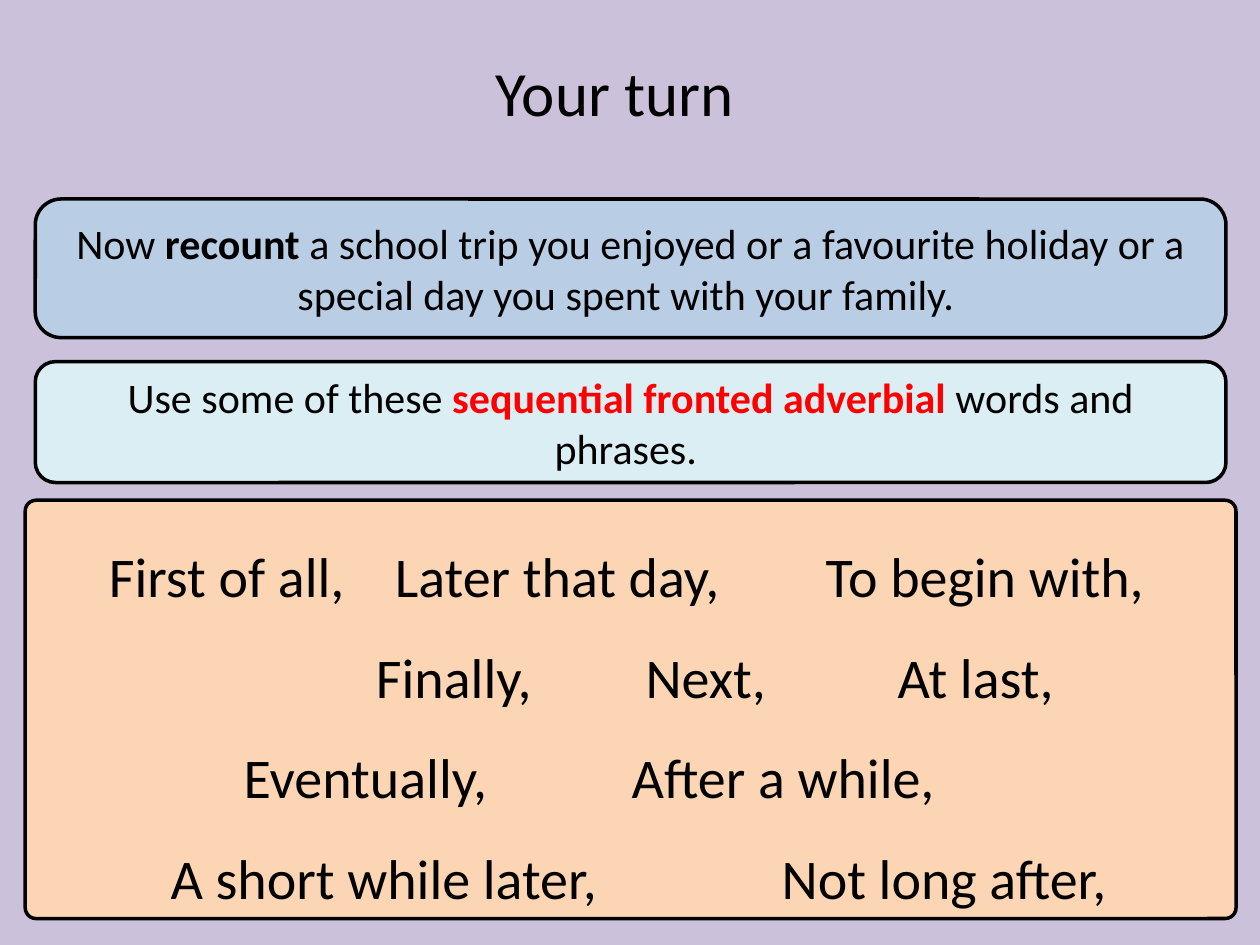
"""Build the "Your turn" writing task slide."""
import pptx
import pptx.dml.color
import pptx.enum.shapes
import pptx.enum.text
import pptx.oxml
import pptx.oxml.ns
import pptx.util

Inches = pptx.util.Inches
RGBColor = pptx.dml.color.RGBColor
BLACK = RGBColor(0x00, 0x00, 0x00)
RED = RGBColor(0xFF, 0x00, 0x00)
LILAC = RGBColor(0xCC, 0xC1, 0xDA)
BLUE = RGBColor(0xB9, 0xCD, 0xE5)
AQUA = RGBColor(0xDB, 0xEE, 0xF4)
PEACH = RGBColor(0xFC, 0xD5, 0xB5)

TITLE = "Your turn"
TITLE_BOX = (3.83, 0.37, 2.1, 0.71)
PLAIN = {"size": 24, "bold": False, "color": BLACK}
STRONG = {**PLAIN, "bold": True}
KEYWORD = {**STRONG, "color": RED}
LARGE = {**PLAIN, "size": 32}
HEADING = {**PLAIN, "size": 36}

INSTRUCTIONS = [
    ((0.28, 1.58, 9.45, 1.1), 0.186, BLUE, [
        ("Now ", PLAIN), ("recount", STRONG),
        (" a school trip you enjoyed or a favourite holiday or a special day"
         " you spent with your family. ", PLAIN)]),
    ((0.28, 2.87, 9.45, 0.96), 0.167, AQUA, [
        ("Use some of these ", PLAIN), ("sequential fronted adverbial", KEYWORD),
        (" words and phrases. ", PLAIN)]),
]
PHRASE_BOX = (0.2, 3.97, 9.61, 3.32)
PHRASE_TEXT_LEFT = 0.33
PHRASE_ROWS = [
    [(0.87, "First of all,"), (3.14, "Later that day,"), (6.56, "To begin with,")],
    [(2.99, "Finally,"), (5.13, "Next,"), (7.13, "At last,")],
    [(1.94, "Eventually,"), (5.02, "After a while,")],
    [(1.36, "A short while later,"), (6.21, "Not long after,")],
]


def add_run(paragraph, text, style):
    run = paragraph.add_run()
    run.text = text
    formats = {"name": "Calibri", "size": pptx.util.Pt(style["size"]), "bold": style["bold"]}
    for name, value in formats.items():
        setattr(run.font, name, value)
    run.font.color.rgb = style["color"]


def add_panel(slide, box, corner, fill):
    shape = slide.shapes.add_shape(
        pptx.enum.shapes.MSO_SHAPE.ROUNDED_RECTANGLE, *map(Inches, box))
    shape.adjustments[0] = corner
    shape.shadow.inherit = False
    shape.fill.solid()
    shape.fill.fore_color.rgb = fill
    shape.line.color.rgb = BLACK
    shape.line.width = pptx.util.Pt(2)
    shape.text_frame.word_wrap = True
    shape.text_frame.vertical_anchor = pptx.enum.text.MSO_ANCHOR.MIDDLE
    return shape.text_frame


def add_tab_stops(paragraph, positions):
    properties = paragraph._p.get_or_add_pPr()
    tab_list = pptx.oxml.parse_xml(f"<a:tabLst {pptx.oxml.ns.nsdecls('a')}/>")
    for position in positions:
        tab = tab_list.makeelement(pptx.oxml.ns.qn("a:tab"), {
            "pos": str(Inches(position - PHRASE_TEXT_LEFT)), "algn": "l"})
        tab_list.append(tab)
    properties.append(tab_list)


def add_title(slide):
    title = slide.shapes.title
    for name, value in zip(("left", "top", "width", "height"), TITLE_BOX):
        setattr(title, name, Inches(value))
    title.text_frame.word_wrap = False
    title.text_frame.auto_size = pptx.enum.text.MSO_AUTO_SIZE.NONE
    paragraph = title.text_frame.paragraphs[0]
    paragraph.alignment = pptx.enum.text.PP_ALIGN.CENTER
    add_run(paragraph, TITLE, HEADING)


def add_phrases(slide):
    frame = add_panel(slide, PHRASE_BOX, 0.026, PEACH)
    for index, row in enumerate(PHRASE_ROWS):
        paragraph = frame.add_paragraph() if index else frame.paragraphs[0]
        paragraph.alignment = pptx.enum.text.PP_ALIGN.LEFT
        paragraph.line_spacing = 1.5
        add_tab_stops(paragraph, [position for position, _ in row])
        add_run(paragraph, "".join(f"\t{phrase}" for _, phrase in row), LARGE)


def main():
    presentation = pptx.Presentation()
    presentation.slide_width = Inches(10)
    presentation.slide_height = Inches(7.5)
    slide = presentation.slides.add_slide(presentation.slide_layouts[5])
    slide.background.fill.solid()
    slide.background.fill.fore_color.rgb = LILAC
    add_title(slide)
    for box, corner, fill, runs in INSTRUCTIONS:
        paragraph = add_panel(slide, box, corner, fill).paragraphs[0]
        paragraph.alignment = pptx.enum.text.PP_ALIGN.CENTER
        for text, style in runs:
            add_run(paragraph, text, style)
    add_phrases(slide)
    presentation.save("out.pptx")


if __name__ == "__main__":
    main()
